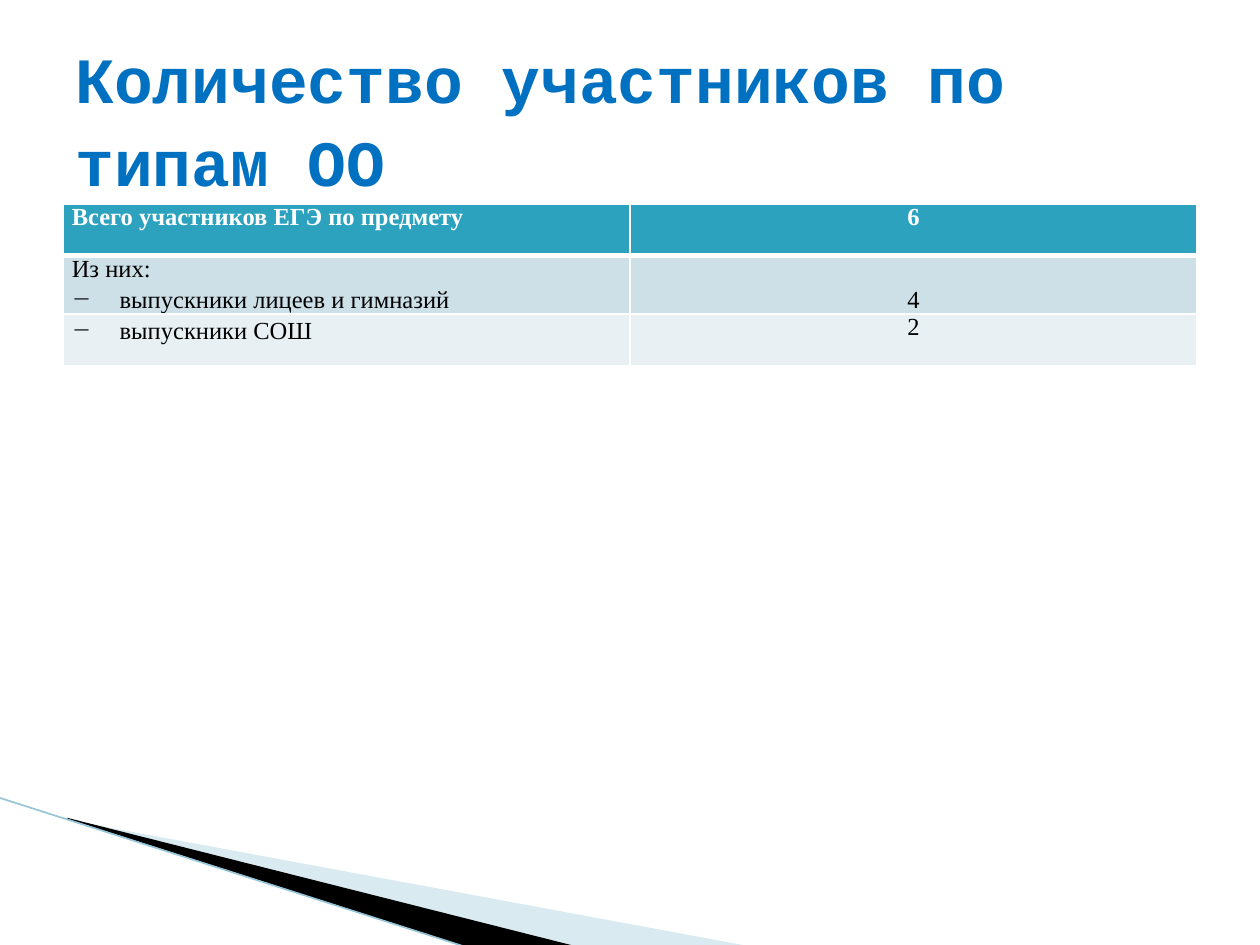
from lxml.etree import SubElement
from pptx import Presentation
from pptx.dml.color import RGBColor
from pptx.enum.text import MSO_ANCHOR as Anchor, PP_ALIGN as Align
from pptx.oxml import parse_xml
from pptx.oxml.ns import nsdecls, qn
from pptx.util import Inches, Pt

WHITE = RGBColor(0xFF, 0xFF, 0xFF)
BLACK = RGBColor(0x00, 0x00, 0x00)
TITLE_BLUE = RGBColor(0x00, 0x70, 0xC0)
TEAL = RGBColor(0x2D, 0xA2, 0xBF)
BAND_DARK = RGBColor(0xCD, 0xE0, 0xE8)
BAND_LIGHT = RGBColor(0xE8, 0xF0, 0xF4)
WEDGE_BLUE = RGBColor(0xA0, 0xCB, 0xDC)
EDGE_BLUE = RGBColor(0x97, 0xC5, 0xD8)


def set_format(target, values):
    for name, value in values.items():
        setattr(target, name, value)


def add_borders(cell, bottom_width):
    properties = cell._tc.get_or_add_tcPr()
    widths = {"lnL": 1, "lnR": 1, "lnT": 1, "lnB": bottom_width}
    for index, (side, width) in enumerate(widths.items()):
        properties.insert(index, parse_xml(
            f'<a:{side} {nsdecls("a")} w="{Pt(width)}"><a:solidFill>'
            f'<a:srgbClr val="{WHITE}"/></a:solidFill></a:{side}>'))


presentation = Presentation()
set_format(presentation, {"slide_width": Inches(10), "slide_height": Inches(7.5)})
slide = presentation.slides.add_slide(presentation.slide_layouts[6])

wedges = [
    ([(0.55, 6.51), (5.95, 7.51), (4.56, 7.51), (0.55, 6.5)], WEDGE_BLUE, 40),
    ([(0.53, 6.49), (4.57, 7.51), (3.72, 7.52), (0.54, 6.5)], BLACK, 100),
]
for points, color, opacity in wedges:
    corners = [(Inches(x), Inches(y)) for x, y in points]
    builder = slide.shapes.build_freeform(*corners[0])
    builder.add_line_segments(corners[1:], close=True)
    wedge = builder.convert_to_shape()
    wedge.shadow.inherit = False
    wedge.fill.solid()
    wedge.fill.fore_color.rgb = color
    wedge.line.fill.background()
    if opacity < 100:
        color_element = wedge._element.spPr.find(".//" + qn("a:srgbClr"))
        SubElement(color_element, qn("a:alpha"), val=str(opacity * 1000))

edge = slide.shapes.add_connector(
    1, Inches(-0.01), Inches(6.33), Inches(3.71), Inches(7.52))
edge.line.color.rgb = EDGE_BLUE
edge.line.width = Pt(0.95)
SubElement(edge._element.spPr, qn("a:effectLst"))

table = slide.shapes.add_table(
    3, 2, Inches(0.5), Inches(1.62), Inches(9), Inches(1.23)).table
rows = [
    (["Всего участников ЕГЭ по предмету"], "6", TEAL, WHITE, True, 3),
    (["Из них:", "− выпускники лицеев и гимназий"], "4", BAND_DARK, BLACK, False, 1),
    (["− выпускники СОШ"], "2", BAND_LIGHT, BLACK, False, 1),
]
for row_index, (labels, count, fill, color, bold, bottom_width) in enumerate(rows):
    for column, (lines, alignment) in enumerate(
            [(labels, Align.JUSTIFY), ([count], Align.CENTER)]):
        cell = table.cell(row_index, column)
        set_format(cell, {
            "margin_left": Inches(0.07), "margin_right": Inches(0.07),
            "margin_top": 0, "margin_bottom": 0,
            "vertical_anchor": Anchor.BOTTOM if len(labels) > len(lines) else Anchor.TOP})
        cell.fill.solid()
        cell.fill.fore_color.rgb = fill
        add_borders(cell, bottom_width)
        for index, line in enumerate(lines):
            frame = cell.text_frame
            paragraph = frame.add_paragraph() if index else frame.paragraphs[0]
            paragraph.alignment = alignment
            if line.startswith("− "):
                properties = paragraph._p.get_or_add_pPr()
                properties.set("marL", str(Inches(0.38)))
                properties.set("indent", str(Inches(-0.38)))
                SubElement(properties, qn("a:buChar"), char="−")
                paragraph.line_spacing = 1.15
            run = paragraph.add_run()
            run.text = line.removeprefix("− ")
            set_format(run.font, {
                "name": "Times New Roman", "size": Pt(14), "bold": bold})
            run.font.color.rgb = color

title = slide.shapes.add_textbox(Inches(0.5), Inches(0.3), Inches(9), Inches(1.25))
set_format(title.text_frame, {"word_wrap": True, "vertical_anchor": Anchor.MIDDLE})
paragraph = title.text_frame.paragraphs[0]
paragraph.line_spacing = 1.07
run = paragraph.add_run()
run.text = "Количество участников по типам ОО"
set_format(run.font, {"name": "Courier New", "size": Pt(36.9), "bold": True})
run.font.color.rgb = TITLE_BLUE

presentation.save("out.pptx")
